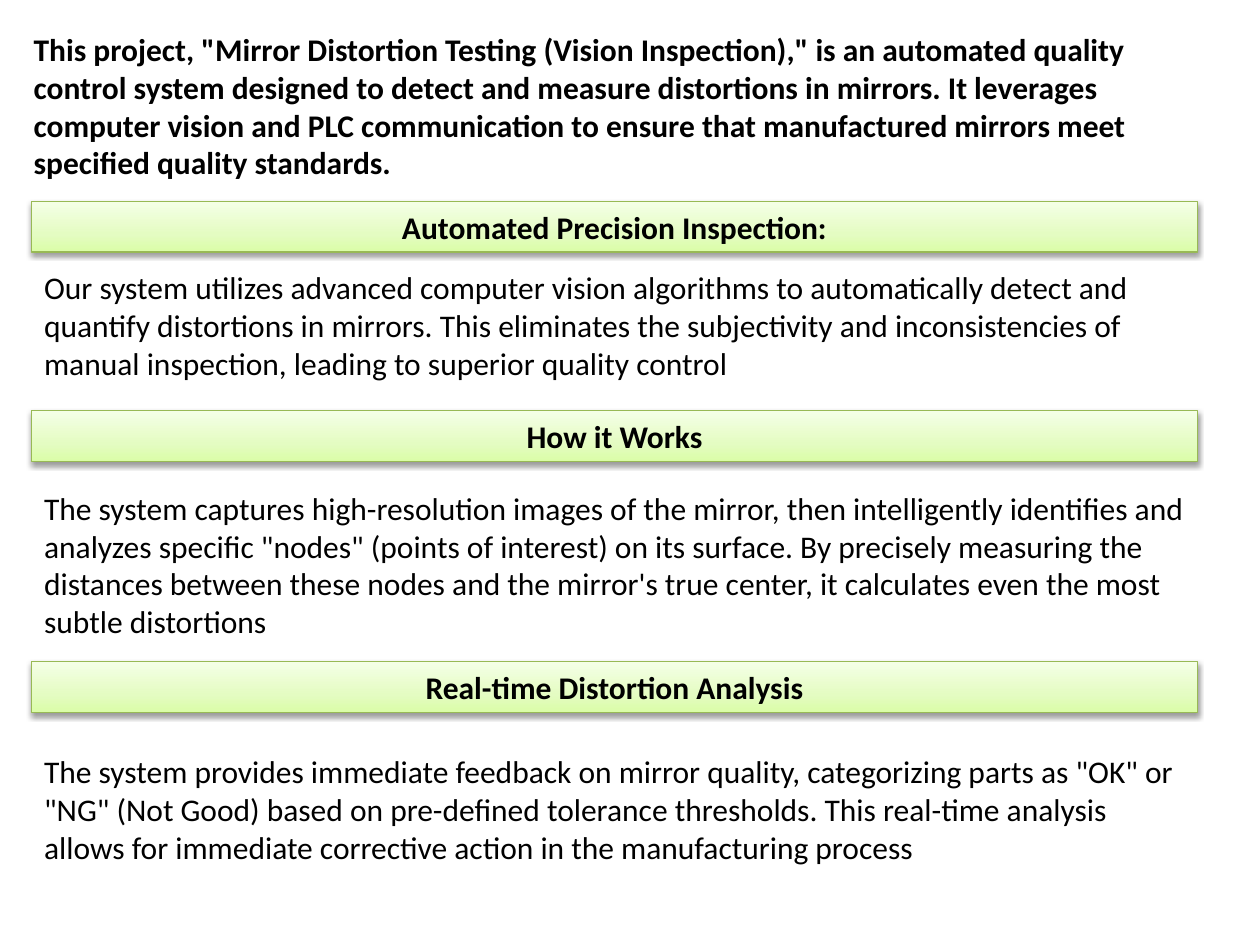
from copy import deepcopy
from dataclasses import dataclass

from lxml import etree
from pptx import Presentation
from pptx.dml.color import RGBColor
from pptx.enum.shapes import MSO_SHAPE
from pptx.enum.text import MSO_ANCHOR, MSO_AUTO_SIZE, PP_ALIGN
from pptx.oxml import parse_xml
from pptx.oxml.ns import nsdecls, qn
from pptx.util import Cm, Pt

RECTANGLE = MSO_SHAPE.RECTANGLE
TOP, MIDDLE = MSO_ANCHOR.TOP, MSO_ANCHOR.MIDDLE
GROW = MSO_AUTO_SIZE.SHAPE_TO_FIT_TEXT
LEFT, CENTER = PP_ALIGN.LEFT, PP_ALIGN.CENTER


@dataclass(frozen=True)
class Theme:
    font: str = "Calibri"
    size: int = 18
    text: str = "000000"
    border: str = "98B955"
    border_width: float = 0.75
    gradient: tuple = ((0, "DAFDA7"), (0.35, "E4FCC2"), (1, "F5FFE7"))
    gradient_angle: int = 90
    shadow: str = "000000"


MARGIN = 0.64
COLUMN_WIDTH = 23.5
HEADING_HEIGHT = 1.02

INTRO = (
    'This project, "Mirror Distortion Testing (Vision Inspection)," is an automated '
    "quality control system designed to detect and measure distortions in mirrors. "
    "It leverages computer vision and PLC communication to ensure that manufactured "
    "mirrors meet specified quality standards."
)

# heading, heading top, body top, body width, body height, body
SECTIONS = (
    ("Automated Precision Inspection:", 4.06, 5.28, COLUMN_WIDTH, 2.57,
     "Our system utilizes advanced computer vision algorithms to automatically detect "
     "and quantify distortions in mirrors. This eliminates the subjectivity and "
     "inconsistencies of manual inspection, leading to superior quality control"),
    ("How it Works", 8.28, 9.73, COLUMN_WIDTH, 3.33,
     "The system captures high-resolution images of the mirror, then intelligently "
     'identifies and analyzes specific "nodes" (points of interest) on its surface. '
     "By precisely measuring the distances between these nodes and the mirror's true "
     "center, it calculates even the most subtle distortions"),
    ("Real-time Distortion Analysis", 13.34, 15.04, 23.7, 2.57,
     "The system provides immediate feedback on mirror quality, categorizing parts as "
     '"OK" or "NG" (Not Good) based on pre-defined tolerance thresholds. This real-time '
     "analysis allows for immediate corrective action in the manufacturing process"),
)


class SlideBuilder:
    def __init__(self, slide, theme):
        self.slide = slide
        self.theme = theme

    def set_text(self, shape, text, align, anchor, bold):
        frame = shape.text_frame
        frame_format = {"word_wrap": True, "auto_size": GROW, "vertical_anchor": anchor}
        for name, value in frame_format.items():
            setattr(frame, name, value)
        para = frame.paragraphs[0]
        para.alignment = align
        span = para.add_run()
        span.text = text
        font_format = {"name": self.theme.font, "size": Pt(self.theme.size), "bold": bold}
        for name, value in font_format.items():
            setattr(span.font, name, value)
        span.font.color.rgb = RGBColor.from_string(self.theme.text)

    def paragraph(self, text, left, top, width, height, bold=False):
        box = self.slide.shapes.add_textbox(Cm(left), Cm(top), Cm(width), Cm(height))
        self.set_text(box, text, LEFT, TOP, bold)

    def heading(self, text, top):
        bar = self.slide.shapes.add_shape(
            RECTANGLE, Cm(MARGIN), Cm(top), Cm(COLUMN_WIDTH), Cm(HEADING_HEIGHT)
        )
        self.fill_gradient(bar)
        bar.line.color.rgb = RGBColor.from_string(self.theme.border)
        bar.line.width = Pt(self.theme.border_width)
        self.drop_shadow(bar)
        self.set_text(bar, text, CENTER, MIDDLE, True)

    def fill_gradient(self, shape):
        fill = shape.fill
        fill.gradient()
        fill.gradient_angle = self.theme.gradient_angle
        stop_list = next(shape.element.iter(qn("a:gsLst")))
        while len(stop_list) < len(self.theme.gradient):
            stop_list.append(deepcopy(stop_list[0]))
        for stop, (position, color) in zip(fill.gradient_stops, self.theme.gradient):
            stop.position = position
            stop.color.rgb = RGBColor.from_string(color)

    def drop_shadow(self, shape):
        shape.shadow.inherit = False
        effects = next(shape.element.iter(qn("a:effectLst")))
        shadow = parse_xml(
            f'<a:outerShdw {nsdecls("a")} blurRad="{Pt(3.1)}" dist="{Pt(1.6)}" '
            'dir="5400000" rotWithShape="0"/>'
        )
        color = etree.SubElement(shadow, qn("a:srgbClr"), val=self.theme.shadow)
        etree.SubElement(color, qn("a:alpha"), val="38000")
        effects.append(shadow)


def main():
    deck = Presentation()
    deck.slide_width, deck.slide_height = Cm(25.4), Cm(19.05)
    page = SlideBuilder(deck.slides.add_slide(deck.slide_layouts[6]), Theme())
    page.paragraph(INTRO, 0.43, 0.48, 24.33, 3.33, bold=True)
    for title, title_top, body_top, width, height, body in SECTIONS:
        page.heading(title, title_top)
        page.paragraph(body, MARGIN, body_top, width, height)
    deck.save("out.pptx")


if __name__ == "__main__":
    main()
